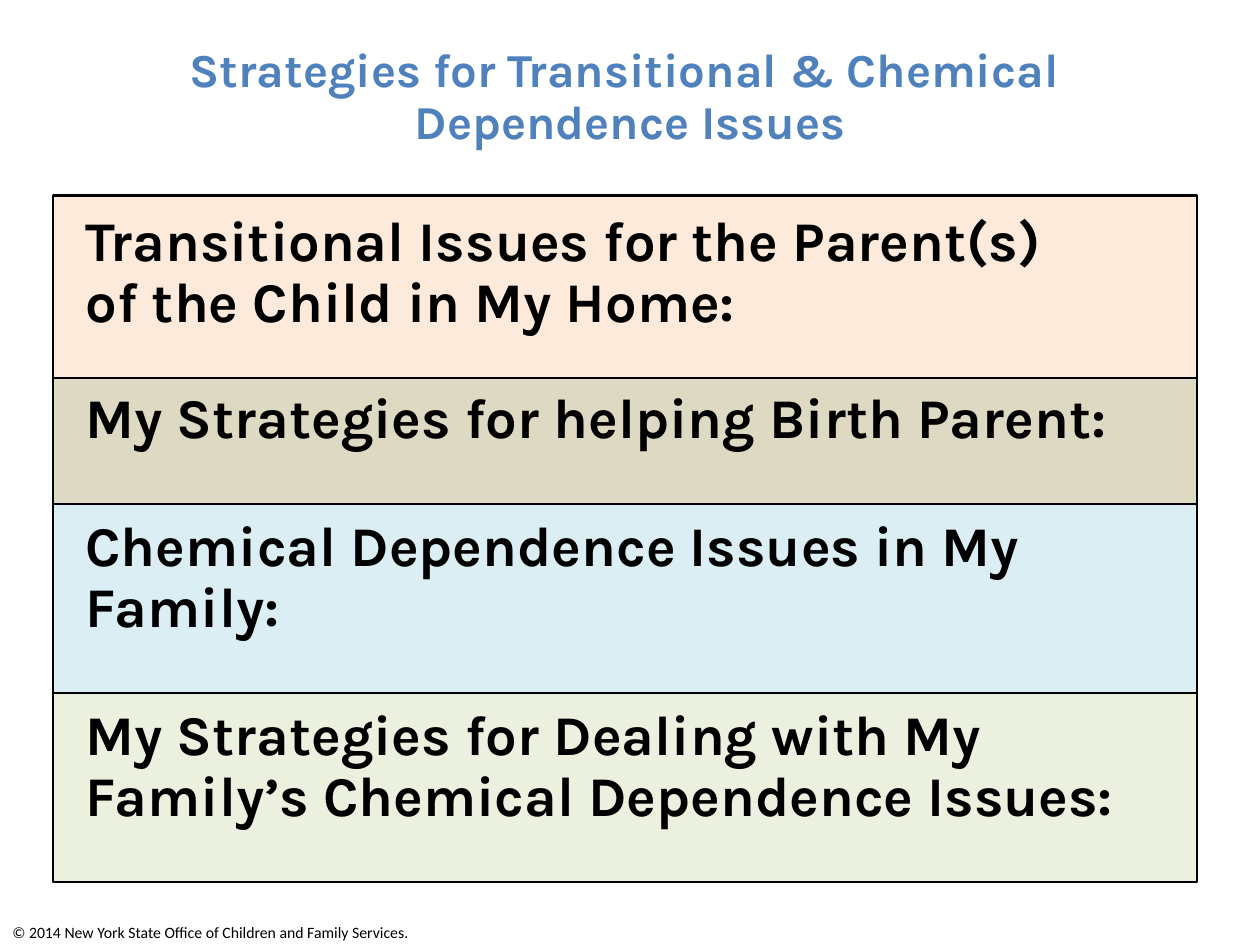
import pptx
import pptx.dml.color
import pptx.enum.shapes
import pptx.enum.text
import pptx.oxml.ns
import pptx.util
from lxml import etree

Inches, Pt = pptx.util.Inches, pptx.util.Pt
RGBColor = pptx.dml.color.RGBColor
ALIGN = pptx.enum.text.PP_ALIGN
RECT = pptx.enum.shapes.MSO_SHAPE.RECTANGLE
STRAIGHT = pptx.enum.shapes.MSO_CONNECTOR.STRAIGHT

BLACK = RGBColor(0x00, 0x00, 0x00)
BLUE = RGBColor(0x4F, 0x81, 0xBD)
PEACH = RGBColor(0xFD, 0xEA, 0xDA)
TAN = RGBColor(0xDD, 0xD9, 0xC3)
AQUA = RGBColor(0xDB, 0xEE, 0xF4)
GREEN = RGBColor(0xEB, 0xF1, 0xDE)

# Content; \v marks a line break inside a paragraph
TITLE = "Strategies for Transitional & Chemical \vDependence Issues"
FOOTER = "© 2014 New York State Office of Children and Family Services."
# band height (inches), fill, space before text (points), text
BANDS = [
    (1.45, PEACH, 0, "Transitional Issues for the Parent(s) \vof the Child in My Home:"),
    (1, TAN, 3, "My Strategies for helping Birth Parent:"),
    (1.5, AQUA, 10, "Chemical Dependence Issues in My Family:"),
    (1.5, GREEN, 10, "My Strategies for Dealing with My Family’s Chemical Dependence Issues:"),
]
LEFT, TOP, WIDTH = 0.42, 1.55, 9.08

prs = pptx.Presentation()
prs.slide_width, prs.slide_height = Inches(10), Inches(7.5)
s = prs.slides.add_slide(prs.slide_layouts[6])


def add_text(box, paragraphs, size, font="Karla", color=BLACK, bold=True,
             align=ALIGN.LEFT, spacing=None, after=0):
    """Add a text box; paragraphs are (text, space before) pairs."""
    tf = s.shapes.add_textbox(*map(Inches, box)).text_frame
    tf.word_wrap = True
    for i, (text, before) in enumerate(paragraphs):
        p = tf.paragraphs[0] if i == 0 else tf.add_paragraph()
        p.text = text
        p.alignment = align
        p.space_before, p.space_after = Pt(before), Pt(after)
        if spacing:
            p.line_spacing = Pt(spacing)
        for r in p.runs:
            r.font.name, r.font.size, r.font.bold = font, Pt(size), bold
            r.font.color.rgb = color


def add_rect(top, height):
    sp = s.shapes.add_shape(RECT, Inches(LEFT), Inches(top), Inches(WIDTH), Inches(height))
    sp.shadow.inherit = False
    return sp


# Coloured bands
dividers = []
y = TOP
for height, fill, _, _ in BANDS:
    sp = add_rect(y, height)
    sp.fill.solid()
    sp.fill.fore_color.rgb = fill
    sp.line.fill.background()
    y += height
    dividers.append(y)

# Outer frame
frame = add_rect(TOP, y - TOP)
frame.fill.background()
frame.line.color.rgb = BLACK
frame.line.width = Pt(1.5)

# Title and band text
add_text((0, 0.3, 10, 1.25), [(TITLE, 0)], 27, color=BLUE, align=ALIGN.CENTER, spacing=30)
add_text((0.58, 1.63, 8.92, 5.62), [(text, before) for _, _, before, text in BANDS],
         32, spacing=35, after=28)

# Lines between bands
for y in dividers[:-1]:
    line = s.shapes.add_connector(STRAIGHT, Inches(LEFT), Inches(y), Inches(LEFT + WIDTH), Inches(y))
    line.line.color.rgb = BLACK
    line.line.width = Pt(1.25)
    etree.SubElement(line._element.spPr, pptx.oxml.ns.qn("a:effectLst"))

# Footer
add_text((0, 7.27, 10, 0.25), [(FOOTER, 0)], 9, font="Calibri", bold=False)

prs.save("out.pptx")
